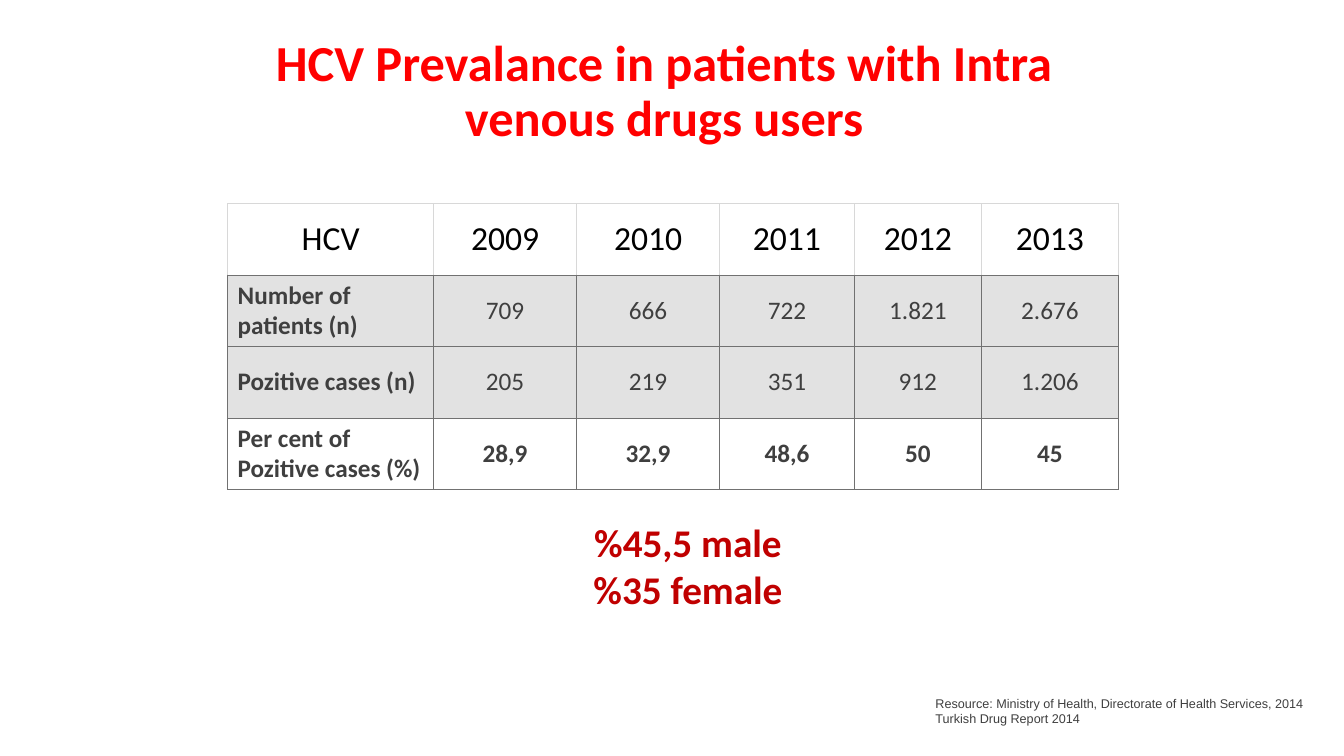
from dataclasses import dataclass

from lxml.etree import SubElement as Sub
from pptx import Presentation
from pptx.dml.color import RGBColor as Rgb
from pptx.enum.text import MSO_ANCHOR as Anchor, PP_ALIGN as Align
from pptx.oxml.ns import qn
from pptx.util import Pt


@dataclass(frozen=True)
class Theme:
    """Colours, fonts and type sizes of the slide."""
    red: str = "FF0000"
    dark: str = "C00000"
    black: str = "000000"
    text: str = "3F3F3F"
    band: str = "E2E2E2"
    white: str = "FFFFFF"
    line: str = "717171"
    pale: str = "D8D8D8"
    body: str = "Calibri"
    small: str = "Arial"
    title: int = 36
    result: int = 28
    head: int = 24
    cell: int = 18
    note: int = 9


T = Theme()
COLS = (147.2, 102.1, 102.1, 96.4, 90.7, 97.9)
ROW = 51.1
ROWS = (
    ("HCV", "2009", "2010", "2011", "2012", "2013"),
    ("Number of patients (n)", "709", "666", "722", "1.821", "2.676"),
    ("Pozitive cases (n)", "205", "219", "351", "912", "1.206"),
    ("Per cent of Pozitive cases (%)", "28,9", "32,9", "48,6", "50", "45"),
)


def style(item, form):
    """Set each attribute named in a format dict."""
    for name, value in form.items():
        setattr(item, name, value)


def font(name, size, bold):
    """Return the format dict of a font."""
    return {"name": name, "size": Pt(size), "bold": bold}


def write(frame, lines, align, face, color, gap=None):
    """Write lines of text as paragraphs of one style."""
    for i, line in enumerate(lines):
        para = frame.paragraphs[0] if i == 0 else frame.add_paragraph()
        para.text = line
        style(para, {"alignment": align, "line_spacing": gap})
        style(para.font, face)
        para.font.color.rgb = Rgb.from_string(color)


def add_text(slide, box, lines, align, face, color, gap=None, **form):
    """Add a wrapped text box."""
    frame = slide.shapes.add_textbox(*map(Pt, box)).text_frame
    style(frame, {"word_wrap": True, **form})
    write(frame, lines, align, face, color, gap)


def edge(cell, colors):
    """Draw the left, right, top and bottom borders of a cell."""
    props = cell._tc.get_or_add_tcPr()
    for side, color in zip("LRTB", colors):
        line = Sub(props, qn(f"a:ln{side}"), w=str(Pt(0.75)))
        fill = Sub(line, qn("a:solidFill"))
        Sub(fill, qn("a:srgbClr"), val=color)


def paint(cell, text, row, col):
    """Fill one cell with its text, borders and colour."""
    head, last = row == 0, row == len(ROWS) - 1
    cell.vertical_anchor = Anchor.MIDDLE
    size, color = (T.head, T.black) if head else (T.cell, T.text)
    bold = last or (col == 0 and not head)
    align = Align.LEFT if col == 0 and not head else Align.CENTER
    write(cell.text_frame, [text], align, font(T.body, size, bold), color)
    edge(cell, [T.pale] * 3 + [T.line] if head else [T.line] * 4)
    if head:
        cell.fill.background()
    else:
        cell.fill.solid()
        cell.fill.fore_color.rgb = Rgb.from_string(T.white if last else T.band)


def add_grid(slide, left, top):
    """Add the table of yearly cases."""
    size = map(Pt, (left, top, sum(COLS), ROW * len(ROWS)))
    grid = slide.shapes.add_table(len(ROWS), len(COLS), *size).table
    style(grid, {"first_row": False, "horz_banding": False})
    for col, width in zip(grid.columns, COLS):
        col.width = Pt(width)
    for r, row in enumerate(ROWS):
        grid.rows[r].height = Pt(ROW)
        for c, text in enumerate(row):
            paint(grid.cell(r, c), text, r, c)


def main():
    """Build the slide and save it."""
    deck = Presentation()
    style(deck, {"slide_width": Pt(960), "slide_height": Pt(540)})
    slide = deck.slides.add_slide(deck.slide_layouts[6])
    add_text(slide, (157, 39.6, 635, 53.3),
             ["HCV Prevalance in patients with Intra venous drugs users"],
             Align.CENTER, font(T.body, T.title, True), T.red, 0.9,
             vertical_anchor=Anchor.MIDDLE)
    sides = ("left", "right", "top", "bottom")
    add_text(slide, (668.2, 496.8, 281.5, 21.6),
             ["Resource: Ministry of Health, Directorate of Health Services, 2014",
              "Turkish Drug Report 2014"],
             Align.JUSTIFY, font(T.small, T.note, False), T.text,
             **{f"margin_{side}": 0 for side in sides})
    add_grid(slide, 162.6, 145.4)
    add_text(slide, (338.4, 366.5, 306, 74.9), ["%45,5 male", "%35 female"],
             Align.CENTER, font(T.body, T.result, True), T.dark)
    deck.save("out.pptx")


if __name__ == "__main__":
    main()
